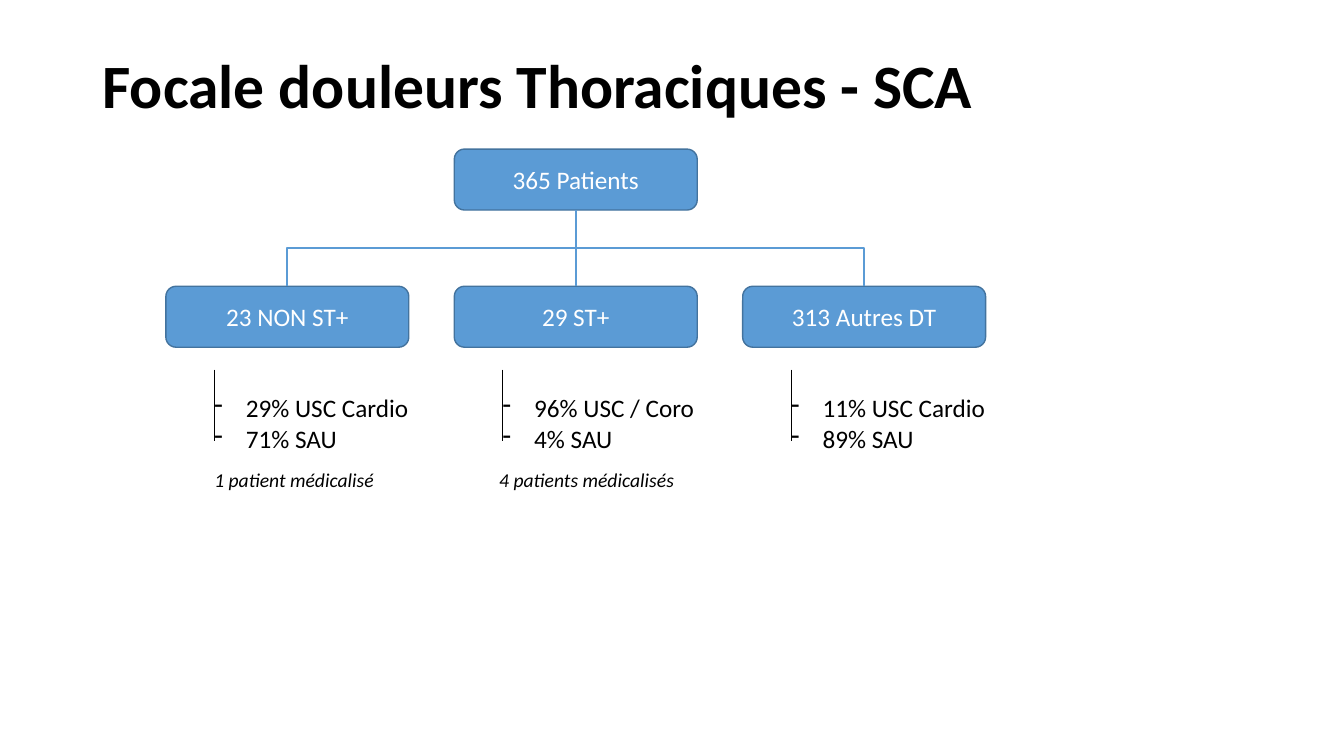
from pptx import Presentation
from pptx.dml.color import RGBColor
from pptx.enum.shapes import MSO_CONNECTOR, MSO_SHAPE
from pptx.enum.text import MSO_ANCHOR, MSO_AUTO_SIZE, PP_ALIGN
from pptx.oxml.ns import qn
from pptx.util import Pt
from lxml.etree import SubElement

BLUE = RGBColor(0x5B, 0x9B, 0xD5)
EDGE = RGBColor(0x43, 0x73, 0x9E)
BLACK = RGBColor(0, 0, 0)
WHITE = RGBColor(255, 255, 255)

BOX_W, BOX_H = 173.5, 43.5
STEP = 206
GROUPS = [
    ("23 NON ST+", ["29% USC Cardio", "71% SAU"], "1 patient médicalisé", 27.5),
    ("29 ST+", ["96% USC / Coro", "4% SAU"], "4 patients médicalisés", 25),
    ("313 Autres DT", ["11% USC Cardio", "89% SAU"], None, 0),
]


def add_run(para, text, size, color, bold=False, italic=False):
    run = para.add_run()
    run.text = text
    font = run.font
    font.name, font.size = "Calibri", Pt(size)
    font.bold, font.italic = bold, italic
    font.color.rgb = color


def add_title(slide, left, top, width, height):
    title = slide.shapes.title
    title.left, title.top = Pt(left), Pt(top)
    title.width, title.height = Pt(width), Pt(height)
    title.text_frame.vertical_anchor = MSO_ANCHOR.MIDDLE
    para = title.text_frame.paragraphs[0]
    para.alignment = PP_ALIGN.LEFT
    para.line_spacing = 0.9
    add_run(para, "Focale douleurs Thoraciques - SCA", 44, BLACK, bold=True)


def add_node(slide, left, top, text):
    node = slide.shapes.add_shape(MSO_SHAPE.ROUNDED_RECTANGLE,
                                  Pt(left), Pt(top), Pt(BOX_W), Pt(BOX_H))
    node.shadow.inherit = False
    node.fill.solid()
    node.fill.fore_color.rgb = BLUE
    node.line.color.rgb = EDGE
    node.line.width = Pt(1)
    node.text_frame.vertical_anchor = MSO_ANCHOR.MIDDLE
    para = node.text_frame.paragraphs[0]
    para.alignment = PP_ALIGN.CENTER
    add_run(para, text, 18, WHITE)
    return node


def add_line(slide, kind, ends, color, width):
    line = slide.shapes.add_connector(kind, *[Pt(v) for v in ends])
    line.line.color.rgb = color
    line.line.width = Pt(width)
    SubElement(line._element.spPr, qn("a:effectLst"))
    return line


def add_link(slide, root, child):
    """Join the foot of the root box to the top of a child box."""
    x1, y1 = root.left + root.width // 2, root.top + root.height
    x2, y2 = child.left + child.width // 2, child.top
    kind = MSO_CONNECTOR.STRAIGHT if x1 == x2 else MSO_CONNECTOR.ELBOW
    link = add_line(slide, kind, (0, 0, 10, 10), BLUE, 1.5)
    link.begin_connect(root, 2)
    link.end_connect(child, 0)
    if x1 == x2:
        return
    # A quarter turn makes the elbow leave downwards
    wide, high = y2 - y1, abs(x2 - x1)
    link.left, link.top = (x1 + x2 - wide) // 2, (y1 + y2 - high) // 2
    link.width, link.height = wide, high
    xfrm = link._element.spPr.find(qn("a:xfrm"))
    for key in ("flipH", "flipV"):
        xfrm.attrib.pop(key, None)
    xfrm.set("rot", str((90 if x2 < x1 else 270) * 60000))
    if x2 > x1:
        xfrm.set("flipH", "1")


def add_list(slide, left, top, items):
    box = slide.shapes.add_textbox(Pt(left), Pt(top), Pt(BOX_W), Pt(51))
    frame = box.text_frame
    frame.word_wrap = True
    frame.auto_size = MSO_AUTO_SIZE.SHAPE_TO_FIT_TEXT
    for i, item in enumerate(items):
        para = frame.paragraphs[0] if i == 0 else frame.add_paragraph()
        props = para._p.get_or_add_pPr()
        props.set("marL", str(Pt(22.5)))
        props.set("indent", str(-Pt(22.5)))
        SubElement(props, qn("a:buFontTx"))
        SubElement(props, qn("a:buChar")).set("char", "-")
        add_run(para, item, 18, BLACK)


def add_note(slide, left, top, width, text):
    box = slide.shapes.add_textbox(Pt(left), Pt(top), Pt(width), Pt(24.5))
    box.text_frame.word_wrap = False
    box.text_frame.auto_size = MSO_AUTO_SIZE.SHAPE_TO_FIT_TEXT
    add_run(box.text_frame.paragraphs[0], text, 14, BLACK, italic=True)


def add_tree(slide, left, top):
    # Boxes and links
    root = add_node(slide, left + STEP, top, "365 Patients")
    for i, (name, items, note, shift) in enumerate(GROUPS):
        x = left + i * STEP
        child = add_node(slide, x, top + 98, name)
        add_link(slide, root, child)
        # Outcomes below each box, with their rule
        add_list(slide, x + 27.5, top + 170.5, items)
        add_line(slide, MSO_CONNECTOR.STRAIGHT,
                 (x + 34.5, top + 157.5, x + 34.5, top + 208.5), BLACK, 0.5)
        if note:
            add_note(slide, x + shift, top + 224.5, 130 if i == 0 else 141, note)


def main():
    deck = Presentation()
    deck.slide_width, deck.slide_height = Pt(960), Pt(540)
    slide = deck.slides.add_slide(deck.slide_layouts[5])
    add_title(slide, 66, 11, 828, 104.5)
    add_tree(slide, 118.5, 106.5)
    deck.save("out.pptx")


if __name__ == "__main__":
    main()
